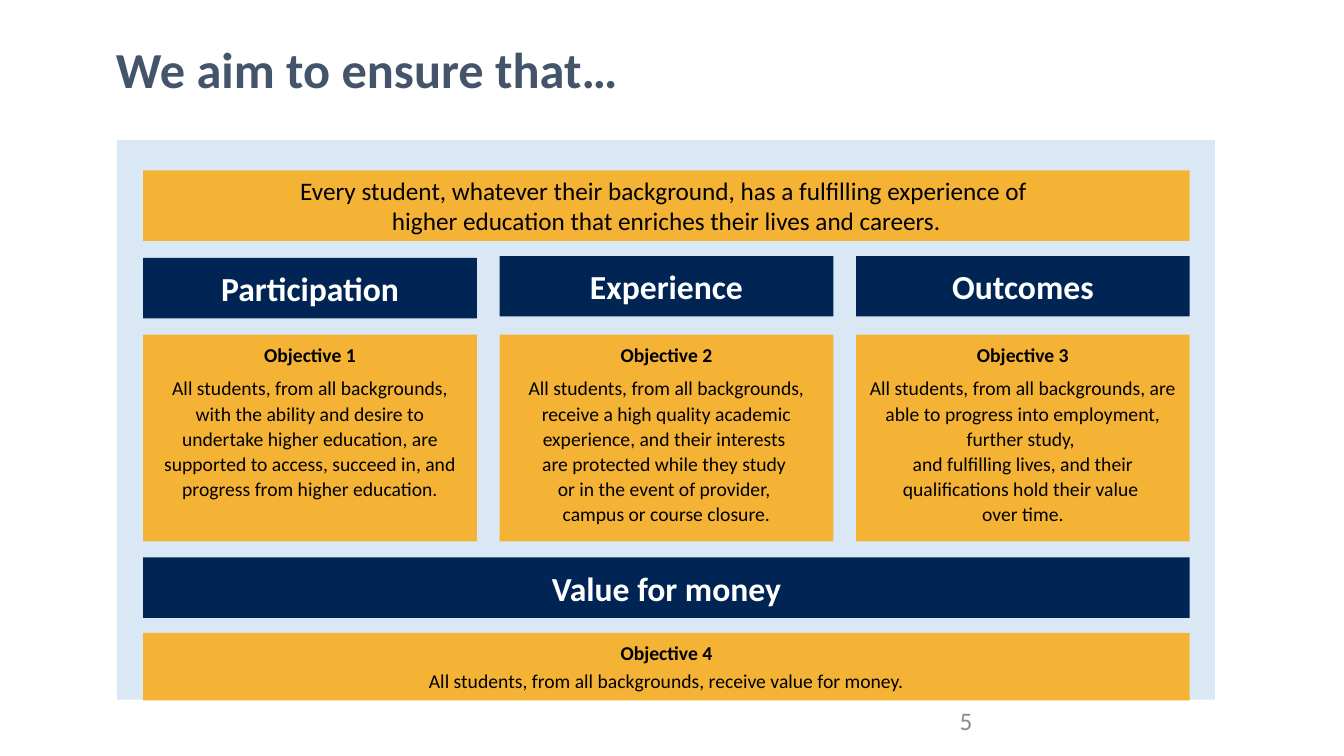
"""Build the slide of aims and objectives for students."""
from dataclasses import dataclass
from typing import Any

from pptx import Presentation
from pptx import util as u
from pptx.dml.color import RGBColor
from pptx.enum import shapes, text

PALE = RGBColor(0xDA, 0xE8, 0xF5)
AMBER = RGBColor(0xF4, 0xB3, 0x35)
NAVY = RGBColor(0x00, 0x25, 0x54)
SLATE = RGBColor(0x44, 0x54, 0x6A)
GREY = RGBColor(0x8C, 0x8C, 0x8C)
BLACK = RGBColor(0, 0, 0)
WHITE = RGBColor(0xFF, 0xFF, 0xFF)

LEFT, WIDE, COLUMN = 1.42, 10.38, 3.31
PITCH = (WIDE - COLUMN) / 2
CENTRE = {"alignment": text.PP_ALIGN.CENTER}
MIDDLE = {"vertical_anchor": text.MSO_ANCHOR.MIDDLE, "word_wrap": True}
CARD = {"vertical_anchor": text.MSO_ANCHOR.TOP, "word_wrap": True,
        "margin_top": u.Inches(0.08)}


@dataclass
class Line:
    """A paragraph with its font and paragraph formats."""
    words: str
    font: dict[str, Any]
    layout: dict[str, Any]


@dataclass
class Panel:
    """A filled rectangle holding lines of text."""
    left: float
    top: float
    width: float
    height: float
    fill: RGBColor
    frame: dict[str, Any]
    lines: list[Line]


@dataclass
class Pillar:
    """A column with a heading and an objective."""
    heading: str
    top: float
    aim: str


PILLARS = [
    Pillar("Participation", 2.56,
           "All students, from all backgrounds, with the ability and desire to "
           "undertake higher education, are supported to access, succeed in, "
           "and progress from higher education."),
    Pillar("Experience", 2.54,
           "All students, from all backgrounds, receive a high quality academic "
           "experience, and their interests \nare protected while they study \n"
           "or in the event of provider, \ncampus or course closure."),
    Pillar("Outcomes", 2.54,
           "All students, from all backgrounds, are able to progress into "
           "employment, further study, \nand fulfilling lives, and their "
           "qualifications hold their value \nover time."),
]


def apply(target: Any, values: dict[str, Any]) -> None:
    """Set each named attribute on the target."""
    for name, value in values.items():
        setattr(target, name, value)


def font(size: float, color: RGBColor, bold: bool = False) -> dict[str, Any]:
    """Return the format values of a font."""
    return {"name": "Calibri", "size": u.Pt(size), "bold": bold, "color": color}


def write(box: Any, lines: list[Line], frame: dict[str, Any]) -> None:
    """Fill a shape's text frame with formatted lines."""
    apply(box.text_frame, frame)
    for index, line in enumerate(lines):
        paras = box.text_frame.paragraphs
        para = box.text_frame.add_paragraph() if index else paras[0]
        para.text = line.words
        apply(para, line.layout)
        values = dict(line.font)
        color = values.pop("color")
        for span in para.runs:
            apply(span.font, values)
            span.font.color.rgb = color


def draw(page: Any, panel: Panel) -> None:
    """Draw one panel."""
    box = page.shapes.add_shape(
        shapes.MSO_SHAPE.RECTANGLE, u.Inches(panel.left), u.Inches(panel.top),
        u.Inches(panel.width), u.Inches(panel.height))
    box.shadow.inherit = False
    box.fill.solid()
    box.fill.fore_color.rgb = panel.fill
    box.line.fill.background()
    write(box, panel.lines, panel.frame)


def banner(left: float, top: float, width: float, words: str) -> Panel:
    """Return a navy heading panel."""
    return Panel(left, top, width, 0.6, NAVY, MIDDLE,
                 [Line(words, font(24, WHITE, True), CENTRE)])


def objective(number: int, aim: str, after: float,
              spacing: dict[str, Any]) -> list[Line]:
    """Return the lines of a numbered objective."""
    return [
        Line(f"Objective {number}", font(14, BLACK, True),
             CENTRE | {"space_after": u.Pt(after)}),
        Line(aim, font(14, BLACK), CENTRE | spacing),
    ]


def panels() -> list[Panel]:
    """Return all panels from back to front."""
    result = [
        Panel(1.16, 1.39, 10.89, 5.55, PALE, MIDDLE, []),
        Panel(LEFT, 1.69, WIDE, 0.7, AMBER, MIDDLE, [
            Line("Every student, whatever their background, has a fulfilling "
                 "experience of \nhigher education that enriches their lives "
                 "and careers.", font(18, BLACK), CENTRE)]),
    ]
    for index, pillar in enumerate(PILLARS):
        left = LEFT + index * PITCH
        lines = objective(index + 1, pillar.aim, 6, {"line_spacing": u.Pt(18)})
        result += [banner(left, pillar.top, COLUMN, pillar.heading),
                   Panel(left, 3.32, COLUMN, 2.05, AMBER, CARD, lines)]
    value = objective(
        4, "All students, from all backgrounds, receive value for money.", 3, {})
    return result + [Panel(LEFT, 6.28, WIDE, 0.67, AMBER, CARD, value),
                     banner(LEFT, 5.53, WIDE, "Value for money")]


def main() -> None:
    """Build and save the deck."""
    deck = Presentation()
    apply(deck, {"slide_width": u.Inches(13.33), "slide_height": u.Inches(7.5)})
    page = deck.slides.add_slide(deck.slide_layouts[5])
    title = page.shapes.title
    apply(title, {"left": u.Inches(1.05), "top": u.Inches(0.4),
                  "width": u.Inches(11.24), "height": u.Inches(0.99)})
    write(title, [Line("We aim to ensure that…", font(36, SLATE, True),
                       {"alignment": text.PP_ALIGN.LEFT, "line_spacing": 0.9})],
          {"vertical_anchor": text.MSO_ANCHOR.TOP, "word_wrap": True})
    for panel in panels():
        draw(page, panel)
    number = page.shapes.add_textbox(u.Inches(9.42), u.Inches(6.95),
                                     u.Inches(3), u.Inches(0.4))
    write(number, [Line("5", font(18, GREY), {})], MIDDLE)
    deck.save("out.pptx")


if __name__ == "__main__":
    main()
